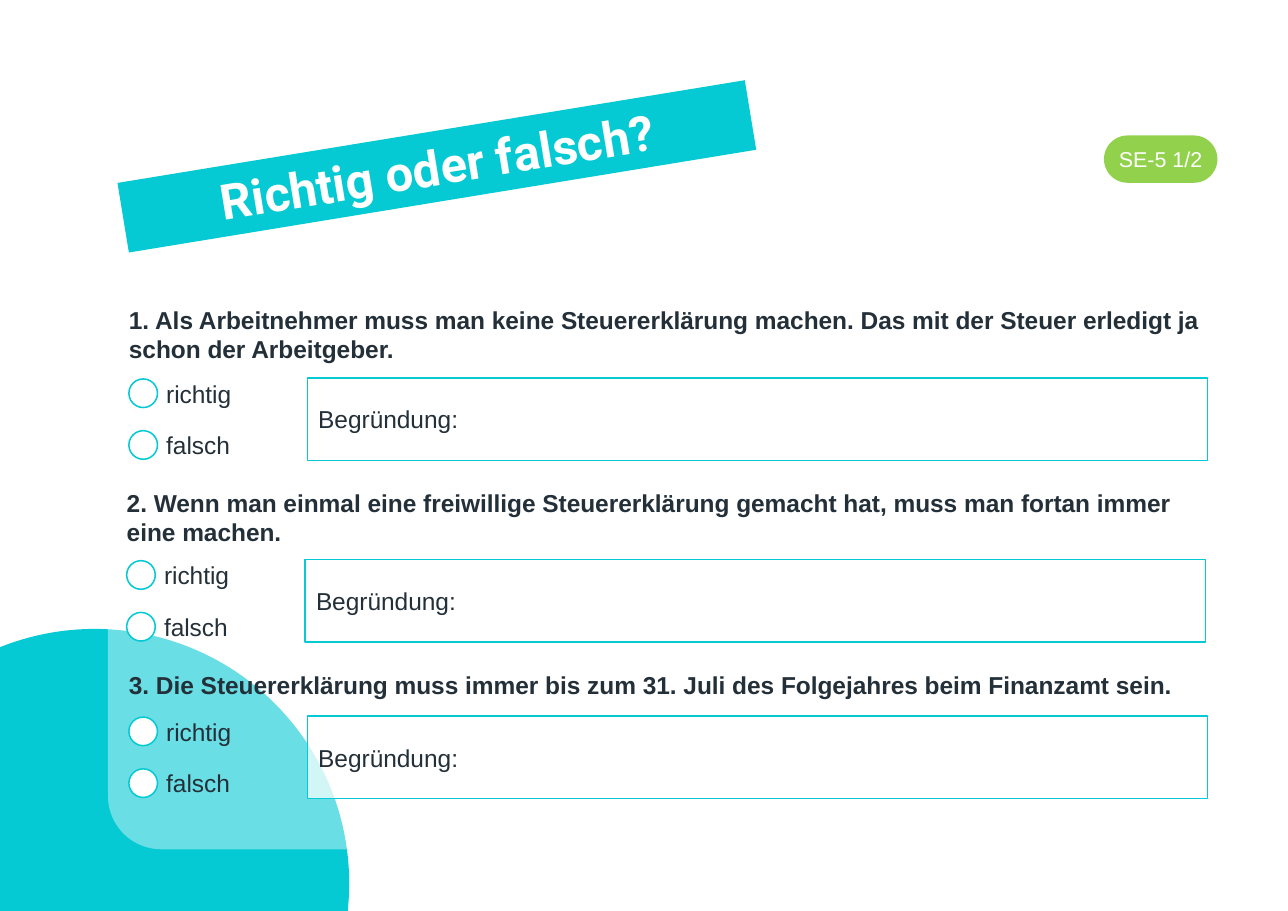
"""Build the worksheet slide "Richtig oder falsch?" with three tax statements."""
from math import cos, radians, sin

from lxml import etree
from pptx import Presentation
from pptx.dml.color import RGBColor
from pptx.enum.shapes import MSO_SHAPE as Shape
from pptx.enum.text import MSO_ANCHOR as Anchor, MSO_AUTO_SIZE as AutoSize, PP_ALIGN as Align
from pptx.oxml.ns import qn
from pptx.util import Inches, Pt

COLORS = {"teal": "05C9D3", "green": "91D14C", "white": "FFFFFF", "ink": "243039"}
QUESTIONS = [
    (1.17, 2.72, 0.64, 3.43,
     "1. Als Arbeitnehmer muss man keine Steuererklärung machen. "
     "Das mit der Steuer erledigt ja schon der Arbeitgeber."),
    (1.15, 4.38, 0.64, 5.08,
     "2. Wenn man einmal eine freiwillige Steuererklärung gemacht hat, "
     "muss man fortan immer eine machen."),
    (1.17, 6.03, 0.37, 6.5,
     "3. Die Steuererklärung muss immer bis zum 31. Juli des Folgejahres beim Finanzamt sein."),
]
ANSWERS = ["richtig", "falsch"]
ANSWER_STEP = 0.47


def style(shape, fill, outline=None, opacity=None):
    """Give a shape its fill, outline and opacity in percent, without a shadow."""
    shape.shadow.inherit = False
    shape.fill.solid()
    shape.fill.fore_color.rgb = RGBColor.from_string(COLORS[fill])
    if opacity:
        color = shape.fill._xPr.find(qn("a:solidFill"))[0]
        etree.SubElement(color, qn("a:alpha"), val=str(opacity * 1000))
    if outline:
        shape.line.color.rgb = RGBColor.from_string(COLORS[outline])
        shape.line.width = Pt(1)
    else:
        shape.line.fill.background()


def write(shape, text, size=16, color="ink", bold=False, font="Arial",
          align=Align.LEFT, anchor=Anchor.MIDDLE, side=0.1):
    """Write one formatted run into a shape."""
    frame = shape.text_frame
    frame.word_wrap = True
    frame.auto_size = AutoSize.NONE
    frame.vertical_anchor = anchor
    frame.margin_left = frame.margin_right = Inches(side)
    frame.margin_top = frame.margin_bottom = Inches(0.05)
    para = frame.paragraphs[0]
    para.alignment = align
    span = para.add_run()
    span.text = text
    span.font.name = font
    span.font.size = Pt(size)
    span.font.bold = bold
    span.font.color.rgb = RGBColor.from_string(COLORS[color])


deck = Presentation()
deck.slide_width = Inches(11.69)
deck.slide_height = Inches(8.27)
page = deck.slides.add_slide(deck.slide_layouts[5])
shapes = page.shapes

center_x, center_y, radius = 0.86, 8.02, 2.31
arc = [(Inches(center_x + radius * cos(radians(angle))),
        Inches(center_y - radius * sin(radians(angle))))
       for angle in [111.85, *range(111, -7, -1)]]
outline = shapes.build_freeform(*arc[0])
outline.add_line_segments([*arc[1:], (arc[-1][0], Inches(8.27)), (0, Inches(8.27))])
style(outline.convert_to_shape(), "teal")

panel = shapes.add_shape(Shape.ROUNDED_RECTANGLE, Inches(0.98), Inches(2.27),
                         Inches(10.08), Inches(5.44))
panel.adjustments[0] = 0.089
style(panel, "white", opacity=40)

badge = shapes.add_shape(Shape.ROUNDED_RECTANGLE, Inches(10.02), Inches(1.23),
                         Inches(1.03), Inches(0.43))
badge.adjustments[0] = 0.5
style(badge, "green")
write(badge, "SE-5 1/2", size=14, color="white", align=Align.CENTER, side=0.04)

title = shapes.title
title.left, title.top = Inches(1.08), Inches(1.19)
title.width, title.height = Inches(5.77), Inches(0.64)
title.rotation = 350.7
style(title, "teal")
write(title, "Richtig oder falsch?", size=32, color="white", bold=True, font="Roboto",
      align=Align.CENTER, anchor=Anchor.TOP, side=0.13)

for left, top, height, answers_top, statement in QUESTIONS:
    question = shapes.add_textbox(Inches(left), Inches(top), Inches(9.78), Inches(height))
    write(question, statement, bold=True, anchor=Anchor.TOP, side=0)
    for row, answer in enumerate(ANSWERS):
        answer_top = answers_top + row * ANSWER_STEP
        label = shapes.add_textbox(Inches(left + 0.24), Inches(answer_top),
                                   Inches(1.28), Inches(0.28))
        write(label, answer)
        circle = shapes.add_shape(Shape.OVAL, Inches(left), Inches(answer_top + 0.01),
                                  Inches(0.26), Inches(0.26))
        style(circle, "white", outline="teal")
    reason = shapes.add_shape(Shape.RECTANGLE, Inches(left + 1.62), Inches(answers_top),
                              Inches(8.17), Inches(0.75))
    style(reason, "white", outline="teal", opacity=70)
    write(reason, "Begründung:")

deck.save("out.pptx")
